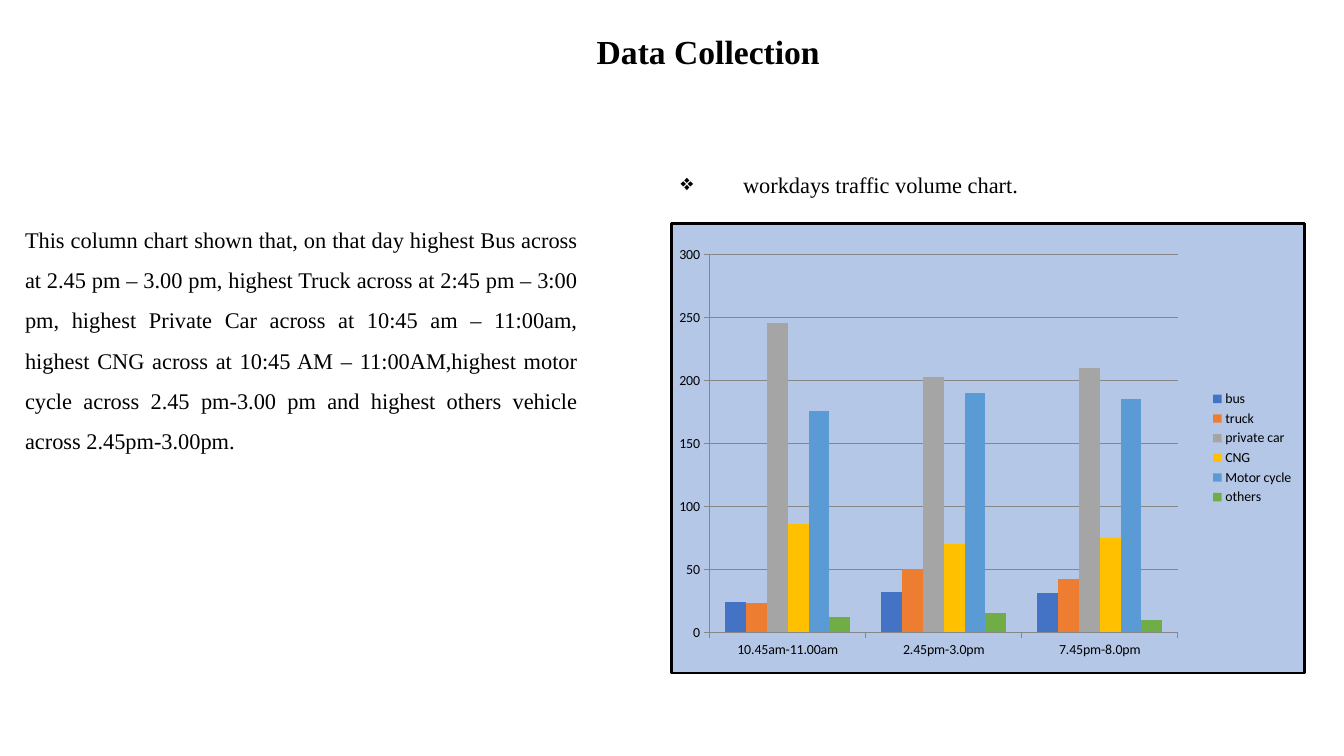
from lxml import etree
from pptx import Presentation
from pptx import util as u
from pptx.chart import data
from pptx.dml import color
from pptx.enum import chart as ch, text
from pptx.oxml import ns, parse_xml

INK, GREY, SKY = "000000", "878787", "B4C7E7"
SERIF = "Times New Roman"
TIMES = ["10.45am-11.00am", "2.45pm-3.0pm", "7.45pm-8.0pm"]
COUNTS = [
    ("bus", (24, 32, 31), "4472C4"),
    ("truck", (23, 50, 42), "ED7D31"),
    ("private car", (246, 203, 210), "A5A5A5"),
    ("CNG", (86, 70, 75), "FFC000"),
    ("Motor cycle", (176, 190, 185), "5B9BD5"),
    ("others", (12, 15, 10), "70AD47"),
]
BODY = (
    "This column chart shown that, on that day highest Bus across at 2.45 pm – 3.00 pm, "
    "highest Truck across at 2:45 pm – 3:00 pm, highest Private Car across at 10:45 am – 11:00am, "
    "highest CNG across at 10:45 AM – 11:00AM,highest motor cycle across 2.45 pm-3.00 pm "
    "and highest others vehicle across 2.45pm-3.00pm."
)


def rgb(code):
    return color.RGBColor.from_string(code)


def place(shape, box):
    shape.left, shape.top, shape.width, shape.height = map(u.Inches, box)


def style(font, name, size, bold=False):
    font.name, font.size, font.bold = name, u.Pt(size), bold
    font.color.rgb = rgb(INK)


def write(shape, words, size, space, bold=False, align=text.PP_ALIGN.LEFT,
          anchor=text.MSO_ANCHOR.MIDDLE, bullet=None):
    frame = shape.text_frame
    frame.word_wrap = True
    frame.auto_size = text.MSO_AUTO_SIZE.NONE
    frame.vertical_anchor = anchor
    frame.text = words
    para = frame.paragraphs[0]
    para.alignment, para.line_spacing = align, space
    if bullet:
        props = para._p.get_or_add_pPr()
        props.set("marL", str(u.Inches(0.62)))
        props.set("indent", str(-u.Inches(0.62)))
        etree.SubElement(props, ns.qn("a:buChar")).set("char", bullet)
    style(para.font, SERIF, size, bold)
    return frame


def add_text(slide, box, words, size, space, **kind):
    shape = slide.shapes.add_textbox(*map(u.Inches, box))
    return write(shape, words, size, space, **kind)


def frame_chart(chart, plot):
    area = chart.element.find(ns.qn("c:chart"))
    area.addnext(parse_xml(
        f'<c:spPr {ns.nsdecls("c", "a")}>'
        f'<a:solidFill><a:srgbClr val="{SKY}"/></a:solidFill>'
        f'<a:ln w="{u.Pt(2)}"><a:solidFill><a:srgbClr val="{INK}"/></a:solidFill></a:ln>'
        '</c:spPr>'))
    region = area.find(ns.qn("c:plotArea"))
    for old in region.findall(ns.qn("c:layout")):
        region.remove(old)
    modes = '<c:layoutTarget val="inner"/><c:xMode val="edge"/><c:yMode val="edge"/>'
    sizes = "".join(f'<c:{key} val="{val}"/>' for key, val in zip("xywh", plot))
    region.insert(0, parse_xml(
        f'<c:layout {ns.nsdecls("c")}><c:manualLayout>{modes}{sizes}'
        '</c:manualLayout></c:layout>'))


def add_bars(slide, box):
    table = data.CategoryChartData()
    table.categories = TIMES
    for name, vals, _ in COUNTS:
        table.add_series(name, vals)
    chart = slide.shapes.add_chart(
        ch.XL_CHART_TYPE.COLUMN_CLUSTERED, *map(u.Inches, box), table).chart
    style(chart.font, "Calibri", 10)
    chart.has_title = False
    chart.has_legend = True
    chart.legend.position = ch.XL_LEGEND_POSITION.RIGHT
    chart.legend.include_in_layout = False
    bars = chart.plots[0]
    bars.gap_width, bars.overlap, bars.vary_by_categories = 150, 0, False
    for run, (_, _, code) in zip(bars.series, COUNTS):
        run.format.fill.solid()
        run.format.fill.fore_color.rgb = rgb(code)
    scale = chart.value_axis
    scale.minimum_scale, scale.maximum_scale, scale.major_unit = 0, 300, 50
    scale.has_major_gridlines = True
    for axis in (chart.category_axis, scale):
        axis.major_tick_mark = ch.XL_TICK_MARK.OUTSIDE
    for part in (chart.category_axis, scale, scale.major_gridlines):
        part.format.line.color.rgb = rgb(GREY)
        part.format.line.width = u.Pt(0.75)
    frame_chart(chart, (0.06, 0.07, 0.74, 0.84))


def add_panel(slide, box):
    left, top, width, height = box
    place(slide.shapes.title, (left, top, 5.98, 0.56))
    write(slide.shapes.title, "workdays traffic volume chart.", 16, 0.9, bullet="❖")
    add_bars(slide, (left, top + 0.63, width, height - 0.63))


def add_note(slide, box):
    frame = add_text(slide, box, BODY, 16, 1.5, align=text.PP_ALIGN.JUSTIFY,
                     anchor=text.MSO_ANCHOR.TOP)
    frame.margin_right = u.Inches(1.09)


def main():
    deck = Presentation()
    deck.slide_width, deck.slide_height = u.Inches(13.33), u.Inches(7.5)
    slide = deck.slides.add_slide(deck.slide_layouts[5])
    add_note(slide, (0.15, 2.06, 6.67, 2.48))
    add_panel(slide, (6.65, 1.57, 6.3, 5.12))
    add_text(slide, (5.82, 0.25, 2.63, 0.56), "Data Collection", 24, 0.9, bold=True)
    deck.save("out.pptx")


if __name__ == "__main__":
    main()
